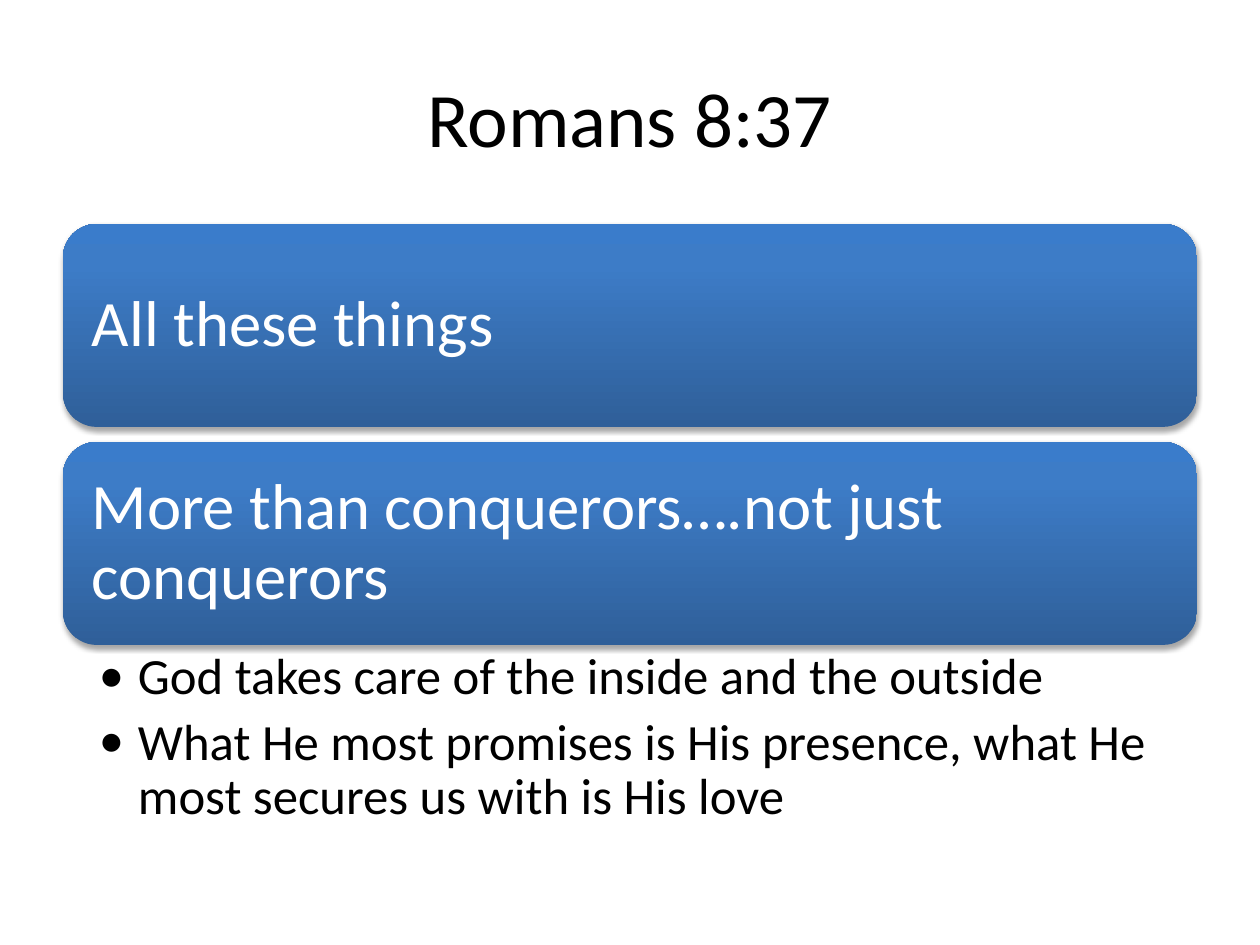
from lxml import etree
from pptx import Presentation, util as u
from pptx.dml.color import RGBColor
from pptx.enum import shapes, text
from pptx.oxml import parse_xml
from pptx.oxml.ns import nsdecls, qn

PX = 914400 // 126
LEFT, WIDTH = 63, 1134
BANNER_TOP, BANNER_HEIGHT, BANNER_GAP = 224, 203, 15
BANNERS = ["All these things", "More than conquerors….not just conquerors"]
POINTS = [
    "God takes care of the inside and the outside",
    "What He most promises is His presence, what He most secures us with is His love",
]
GRADIENT = [(0, "2F5F99"), (80, "3D7CC7"), (100, "3A7CCB")]


def px(length):
    return u.Emu(length * PX)


def color(value):
    return RGBColor.from_string(value)


def set_frame(frame, anchor, side, edge):
    frame.word_wrap = True
    frame.vertical_anchor = anchor
    frame.margin_left = frame.margin_right = px(side)
    frame.margin_top = frame.margin_bottom = px(edge)


def add_words(paragraph, words, size, ink, align=text.PP_ALIGN.LEFT):
    paragraph.alignment = align
    run = paragraph.add_run()
    run.text = words
    run.font.name = "Calibri"
    run.font.size = u.Pt(size)
    run.font.color.rgb = color(ink)


def add_title(slide, words):
    title = slide.shapes.add_textbox(px(LEFT), px(38), px(WIDTH), px(158))
    set_frame(title.text_frame, text.MSO_ANCHOR.MIDDLE, 13, 6)
    add_words(title.text_frame.paragraphs[0], words, 44, "000000", text.PP_ALIGN.CENTER)


def style_banner(banner):
    stops = "".join(
        f'<a:gs pos="{place * 1000}"><a:srgbClr val="{shade}"/></a:gs>'
        for place, shade in GRADIENT
    )
    gradient = parse_xml(
        f'<a:gradFill {nsdecls("a")} rotWithShape="1"><a:gsLst>{stops}</a:gsLst>'
        '<a:lin ang="16200000" scaled="0"/></a:gradFill>'
    )
    effects = parse_xml(
        f'<a:effectLst {nsdecls("a")}><a:outerShdw blurRad="{u.Pt(3.1)}" '
        f'dist="{u.Pt(1.8)}" dir="5400000" rotWithShape="0">'
        '<a:srgbClr val="000000"><a:alpha val="35000"/></a:srgbClr>'
        '</a:outerShdw></a:effectLst>'
    )
    banner.line.fill.background()
    properties = banner._element.spPr
    properties.find(qn("a:prstGeom")).addnext(gradient)
    properties.append(effects)


def add_banner(slide, top, words):
    banner = slide.shapes.add_shape(
        shapes.MSO_SHAPE.ROUNDED_RECTANGLE,
        px(LEFT), px(top), px(WIDTH), px(BANNER_HEIGHT),
    )
    style_banner(banner)
    set_frame(banner.text_frame, text.MSO_ANCHOR.MIDDLE, 19, 19)
    paragraph = banner.text_frame.paragraphs[0]
    paragraph.line_spacing = 0.9
    add_words(paragraph, words, 37, "FFFFFF")


def add_bullet(paragraph):
    properties = paragraph._p.get_or_add_pPr()
    properties.set("marL", str(px(39)))
    properties.set("indent", str(px(-39)))
    etree.SubElement(properties, qn("a:buFont")).set("typeface", "Calibri")
    etree.SubElement(properties, qn("a:buChar")).set("char", "•")


def add_points(slide, top, points):
    box = slide.shapes.add_textbox(px(LEFT), px(top), px(WIDTH), px(195))
    frame = box.text_frame
    set_frame(frame, text.MSO_ANCHOR.TOP, 36, 6)
    for index, words in enumerate(points):
        paragraph = frame.add_paragraph() if index else frame.paragraphs[0]
        paragraph.level = 1
        paragraph.line_spacing = 0.9
        paragraph.space_after = u.Pt(6)
        add_bullet(paragraph)
        add_words(paragraph, words, 29, "000000")


def main():
    deck = Presentation()
    deck.slide_width, deck.slide_height = px(1260), px(945)
    slide = deck.slides.add_slide(deck.slide_layouts[6])
    add_title(slide, "Romans 8:37")
    for index, words in enumerate(BANNERS):
        add_banner(slide, BANNER_TOP + index * (BANNER_HEIGHT + BANNER_GAP), words)
    add_points(slide, BANNER_TOP + 2 * BANNER_HEIGHT + BANNER_GAP, POINTS)
    deck.save("out.pptx")


if __name__ == "__main__":
    main()
